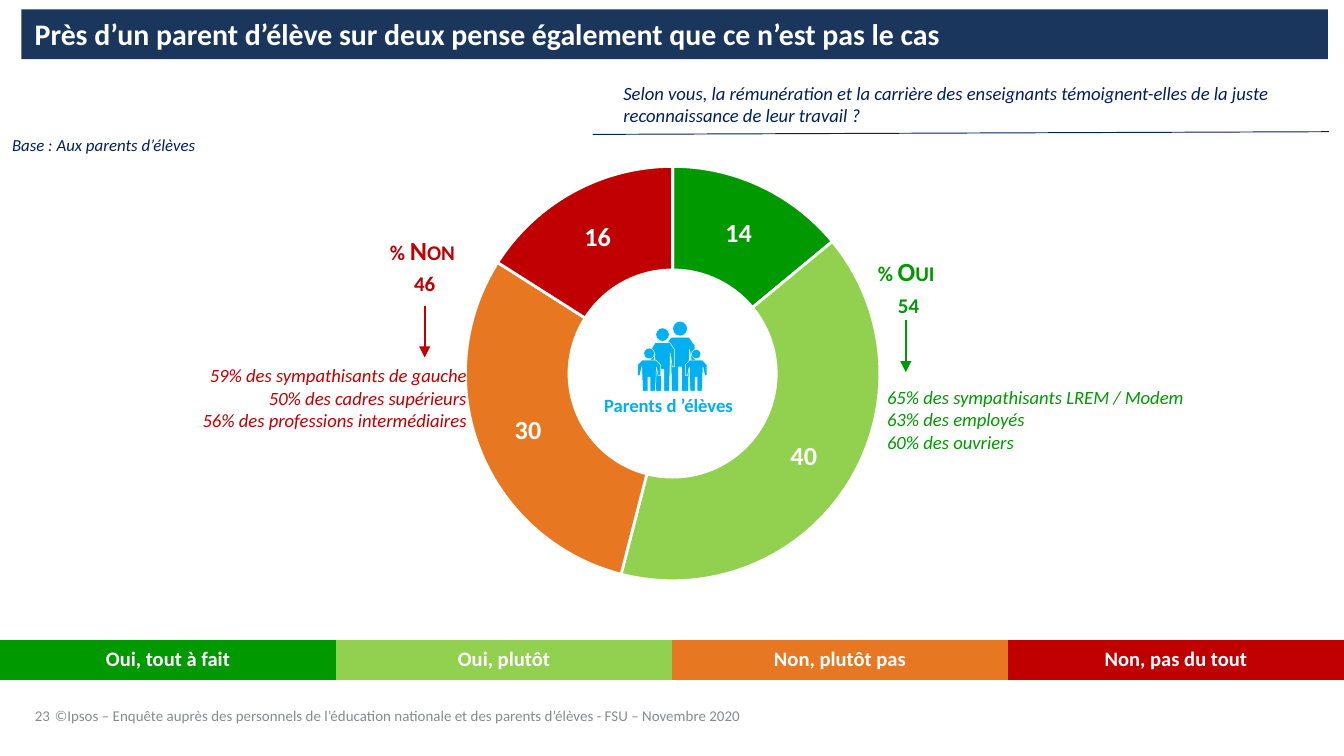
"""Build the survey slide on how parents see teachers' pay and careers."""
import pptx
import pptx.chart.data
import pptx.dml.color
import pptx.enum.chart
import pptx.enum.shapes
import pptx.enum.text
import pptx.oxml
import pptx.oxml.ns
import pptx.util

Inches = pptx.util.Inches
Pt = pptx.util.Pt
Align = pptx.enum.text.PP_ALIGN
Anchor = pptx.enum.text.MSO_ANCHOR
Shape = pptx.enum.shapes.MSO_SHAPE
qn = pptx.oxml.ns.qn
rgb = pptx.dml.color.RGBColor.from_string


class Theme:
    font = "Calibri"
    white = rgb("FFFFFF")
    band = rgb("1B365D")
    navy = rgb("002060")
    grey = rgb("888B8D")
    sky = rgb("00B0F0")
    green = rgb("009900")
    lime = rgb("92D050")
    orange = rgb("E87722")
    red = rgb("C00000")
    title = Pt(16)
    total = Pt(14)
    legend = Pt(11)
    body = Pt(10)
    base = Pt(9)
    footer = Pt(8)


def write(sp, lines, size, color, bold=False, italic=False, align=Align.LEFT,
          anchor=Anchor.TOP, inset=True):
    tf = sp.text_frame
    tf.word_wrap = True
    tf.vertical_anchor = anchor
    if not inset:
        tf.margin_left = tf.margin_right = tf.margin_top = tf.margin_bottom = 0
    for i, line in enumerate(lines):
        p = tf.add_paragraph() if i else tf.paragraphs[0]
        p.text = line
        p.alignment = align
        p.font.name, p.font.size, p.font.color.rgb = Theme.font, size, color
        p.font.bold, p.font.italic = bold, italic
    return tf


def add_line(s, start, end, color, width, arrow=False):
    line = s.shapes.add_connector(
        pptx.enum.shapes.MSO_CONNECTOR.STRAIGHT,
        *(Inches(v) for v in start + end))
    line.line.color.rgb = color
    line.line.width = Pt(width)
    sp_pr = line._element.spPr
    if arrow:
        ln = sp_pr.find(qn("a:ln"))
        ln.append(ln.makeelement(qn("a:tailEnd"), {"type": "triangle"}))
    sp_pr.append(sp_pr.makeelement(qn("a:effectLst"), {}))


prs = pptx.Presentation()
prs.slide_width, prs.slide_height = Inches(10), Inches(10) * 9 // 16
s = prs.slides.add_slide(prs.slide_layouts[6])

answers = [
    ("Oui, tout à fait", 14, Theme.green),
    ("Oui, plutôt", 40, Theme.lime),
    ("Non, plutôt pas", 30, Theme.orange),
    ("Non, pas du tout", 16, Theme.red),
]

data = pptx.chart.data.CategoryChartData()
data.categories = ["1", "2", "3", "4"]
data.add_series("Series 1", [value for _, value, _ in answers])
chart = s.shapes.add_chart(
    pptx.enum.chart.XL_CHART_TYPE.DOUGHNUT,
    Inches(3.16), Inches(1.1), Inches(3.69), Inches(3.36), data).chart
chart.has_legend = False
chart.has_title = False
chart.font.name, chart.font.size = Theme.font, Theme.body
plot = chart.plots[0]
plot.vary_by_categories = True
plot._element.find(qn("c:holeSize")).set("val", "65")
for i, (_, _, color) in enumerate(answers):
    fmt = plot.series[0].points[i].format
    fmt.fill.solid()
    fmt.fill.fore_color.rgb = color
    fmt.line.color.rgb = Theme.white
    fmt.line.width = Pt(1.5)
plot.has_data_labels = True
labels = plot.data_labels
labels.show_value = True
labels.show_percentage = False
labels.font.name, labels.font.size = Theme.font, Theme.total
labels.font.bold = True
labels.font.color.rgb = Theme.white

sp = s.shapes.add_shape(Shape.RECTANGLE, Inches(0.16), Inches(0.07), Inches(9.72), Inches(0.37))
sp.shadow.inherit = False
sp.fill.solid()
sp.fill.fore_color.rgb = Theme.band
sp.line.fill.background()
write(sp, ["Près d’un parent d’élève sur deux pense également que ce n’est pas le cas"],
      Theme.title, Theme.white, bold=True)

texts = [
    ((4.54, 0.53, 5.46, 0.49),
     ["Selon vous, la rémunération et la carrière des enseignants témoignent-elles "
      "de la juste reconnaissance de leur travail ?"],
     dict(size=Theme.body, color=Theme.navy, italic=True, anchor=Anchor.MIDDLE)),
    ((0.09, 1, 2.39, 0.15), ["Base : Aux parents d’élèves"],
     dict(size=Theme.base, color=Theme.navy, italic=True, inset=False)),
    ((4.36, 2.88, 1.23, 0.27), ["Parents d ’élèves"],
     dict(size=Theme.body, color=Theme.sky, bold=True, align=Align.CENTER)),
    ((0.88, 2.71, 2.59, 0.5),
     ["59% des sympathisants de gauche", "50% des cadres supérieurs",
      "56% des professions intermédiaires"],
     dict(size=Theme.body, color=Theme.red, italic=True, align=Align.RIGHT, inset=False)),
    ((6.6, 2.87, 2.59, 0.5),
     ["65% des sympathisants LREM / Modem", "63% des employés", "60% des ouvriers"],
     dict(size=Theme.body, color=Theme.green, italic=True, inset=False)),
    ((0.26, 5.13, 0.34, 0.26), ["23"],
     dict(size=Theme.footer, color=Theme.grey, anchor=Anchor.BOTTOM, inset=False)),
    ((0.31, 5.21, 7.39, 0.2),
     ["©Ipsos – Enquête auprès des personnels de l’éducation nationale "
      "et des parents d’élèves - FSU – Novembre 2020"],
     dict(size=Theme.footer, color=Theme.grey)),
]
for box, lines, style in texts:
    write(s.shapes.add_textbox(*(Inches(v) for v in box)), lines, **style)

totals = [
    ((6.25, 1.93, 1.02, 0.41), "% Oui \v54", Theme.green),
    ((2.64, 1.61, 1.04, 0.73), "% Non \v46", Theme.red),
]
for box, total, color in totals:
    tf = write(s.shapes.add_textbox(*(Inches(v) for v in box)), [total], Theme.total,
               color, bold=True, align=Align.CENTER, anchor=Anchor.MIDDLE)
    for r in tf.paragraphs[0].runs:
        r.font._element.set("cap", "small")

add_line(s, (4.41, 1), (9.89, 0.98), Theme.navy, 0.5)
add_line(s, (3.16, 2.28), (3.16, 2.66), Theme.red, 1, arrow=True)
add_line(s, (6.74, 2.38), (6.74, 2.77), Theme.green, 1, arrow=True)

frame = s.shapes.add_table(1, 4, 0, Inches(4.76), Inches(10), Inches(0.3))
table = frame.table
table.first_row = table.horz_banding = False
table._tbl.tblPr.find(qn("a:tableStyleId")).text = "{2D5ABB26-0587-4C30-8999-92F81FD0307C}"
for cell, (answer, _, color) in zip(table.rows[0].cells, answers):
    cell.fill.solid()
    cell.fill.fore_color.rgb = color
    cell.vertical_anchor = Anchor.MIDDLE
    p = cell.text_frame.paragraphs[0]
    p.text = answer
    p.alignment = Align.CENTER
    p.font.name, p.font.size, p.font.bold = Theme.font, Theme.legend, True
    p.font.color.rgb = Theme.white

half = [(0.3, 0), (0.5, 0.15), (0.5, 0.5), (0.4, 0.5), (0.32, 0.22),
        (0.28, 1), (0.05, 1), (0.05, 0.55)]
outline = half + [(-x, y) for x, y in reversed(half)]
people = [(5.06, 2.39, 0.11, 0.22), (4.93, 2.44, 0.1, 0.18),
          (4.83, 2.59, 0.08, 0.17), (5.18, 2.6, 0.07, 0.16)]
family = s.shapes.add_group_shape()
for center, top, head, width in people:
    neck = top + head + 0.01
    points = [(Inches(center + x * width), Inches(neck + y * (2.91 - neck))) for x, y in outline]
    builder = family.shapes.build_freeform(*points[0], scale=1.0)
    builder.add_line_segments(points[1:], close=True)
    body = builder.convert_to_shape()
    face = family.shapes.add_shape(Shape.OVAL, Inches(center - head / 2), Inches(top),
                                   Inches(head), Inches(head))
    for sp in (body, face):
        sp.shadow.inherit = False
        sp.fill.solid()
        sp.fill.fore_color.rgb = Theme.sky
        sp.line.color.rgb = Theme.white
        sp.line.width = Pt(0.25)

prs.save("out.pptx")
